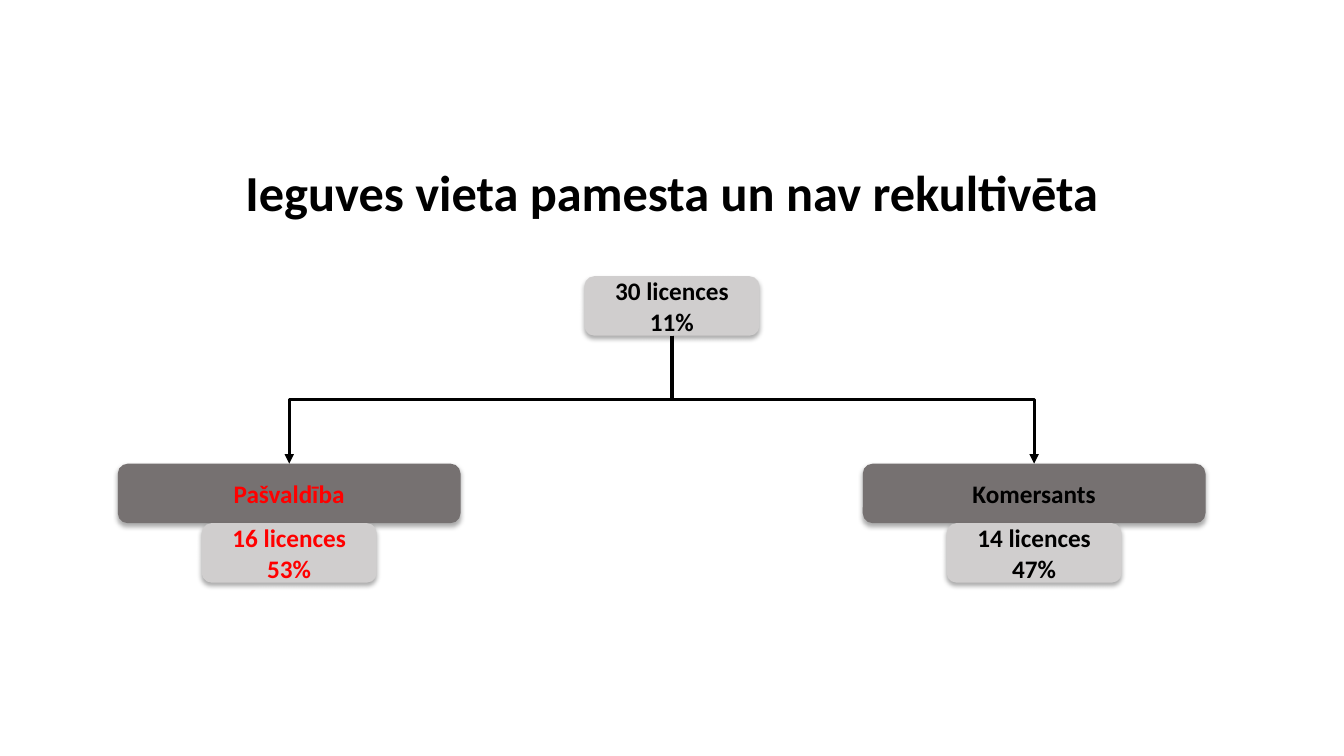
from dataclasses import dataclass

from lxml import etree
from pptx import Presentation
from pptx.dml.color import RGBColor
from pptx.enum.shapes import MSO_CONNECTOR, MSO_SHAPE
from pptx.enum.text import MSO_ANCHOR, PP_ALIGN
from pptx.oxml.ns import qn
from pptx.shapes.shapetree import SlideShapes
from pptx.text.text import TextFrame
from pptx.util import Pt

ROUND = MSO_SHAPE.ROUNDED_RECTANGLE
ELBOW = MSO_CONNECTOR.ELBOW
MIDDLE = MSO_ANCHOR.MIDDLE
CENTER = PP_ALIGN.CENTER


@dataclass(frozen=True)
class Theme:
    font: str = "Calibri"
    black: str = "000000"
    red: str = "FF0000"
    light: str = "D0CECE"
    dark: str = "767171"
    title: float = 36
    body: float = 18
    line: float = 2.25


@dataclass(frozen=True)
class Box:
    mid: float
    top: float
    width: float
    text: str
    fill: str
    color: str


@dataclass(frozen=True)
class Arrow:
    start: float
    end: float


THEME = Theme()
HEIGHT = 42.5
ROOT_X, LEFT_X, RIGHT_X = 480, 206.6, 738.7
ROOT_Y, NAME_Y = 197.3, 331.2
COUNT_Y = NAME_Y + HEIGHT
NAME_W, COUNT_W = 244.8, 125

BOXES = [
    Box(ROOT_X, ROOT_Y, COUNT_W, "30 licences\n11%", THEME.light, THEME.black),
    Box(RIGHT_X, NAME_Y, NAME_W, "Komersants", THEME.dark, THEME.black),
    Box(LEFT_X, NAME_Y, NAME_W, "Pašvaldība", THEME.dark, THEME.red),
    Box(LEFT_X, COUNT_Y, COUNT_W, "16 licences\n53%", THEME.light, THEME.red),
    Box(RIGHT_X, COUNT_Y, COUNT_W, "14 licences\n47%", THEME.light, THEME.black),
]
ARROWS = [Arrow(ROOT_X, LEFT_X), Arrow(ROOT_X, RIGHT_X)]


def write(frame: TextFrame, text: str, size: float, color: str) -> None:
    frame.text = text
    frame.word_wrap = True
    frame.vertical_anchor = MIDDLE
    for para in frame.paragraphs:
        para.alignment = CENTER
        for run in para.runs:
            run.font.name = THEME.font
            run.font.size = Pt(size)
            run.font.bold = True
            run.font.color.rgb = RGBColor.from_string(color)


def draw_title(shapes: SlideShapes, text: str) -> None:
    title = shapes.add_textbox(Pt(72), Pt(81.4), Pt(816), Pt(115.9))
    write(title.text_frame, text, THEME.title, THEME.black)
    title.text_frame.paragraphs[0].line_spacing = 0.9


def draw_box(shapes: SlideShapes, box: Box) -> None:
    shape = shapes.add_shape(
        ROUND, Pt(box.mid - box.width / 2), Pt(box.top), Pt(box.width), Pt(HEIGHT)
    )
    shape.shadow.inherit = False
    shape.fill.solid()
    shape.fill.fore_color.rgb = RGBColor.from_string(box.fill)
    shape.line.fill.background()
    write(shape.text_frame, box.text, THEME.body, box.color)
    effects = shape._element.spPr.find(qn("a:effectLst"))
    shade = etree.SubElement(
        effects, qn("a:outerShdw"), blurRad=str(Pt(3.5)), dist=str(Pt(2.2)),
        dir="5400000", algn="ctr", rotWithShape="0",
    )
    tint = etree.SubElement(shade, qn("a:srgbClr"), val=THEME.black)
    etree.SubElement(tint, qn("a:alpha"), val="32000")


def draw_arrow(shapes: SlideShapes, arrow: Arrow) -> None:
    start_y = ROOT_Y + HEIGHT
    mid_x = (arrow.start + arrow.end) / 2
    mid_y = (start_y + NAME_Y) / 2
    right = arrow.end > arrow.start
    half_w = (NAME_Y - start_y) / 2 * (-1 if right else 1)
    half_h = abs(arrow.end - arrow.start) / 2
    link = shapes.add_connector(
        ELBOW, Pt(mid_x - half_w), Pt(mid_y - half_h),
        Pt(mid_x + half_w), Pt(mid_y + half_h),
    )
    link.line.width = Pt(THEME.line)
    link.line.color.rgb = RGBColor.from_string(THEME.black)
    props = link._element.spPr
    props.find(qn("a:xfrm")).set("rot", "16200000" if right else "5400000")
    etree.SubElement(props.find(qn("a:ln")), qn("a:tailEnd"), type="triangle")
    etree.SubElement(props, qn("a:effectLst"))


def main() -> None:
    deck = Presentation()
    deck.slide_width, deck.slide_height = Pt(960), Pt(540)
    shapes = deck.slides.add_slide(deck.slide_layouts[6]).shapes
    draw_title(shapes, "Ieguves vieta pamesta un nav rekultivēta")
    for box in BOXES:
        draw_box(shapes, box)
    for arrow in ARROWS:
        draw_arrow(shapes, arrow)
    deck.save("out.pptx")


if __name__ == "__main__":
    main()
